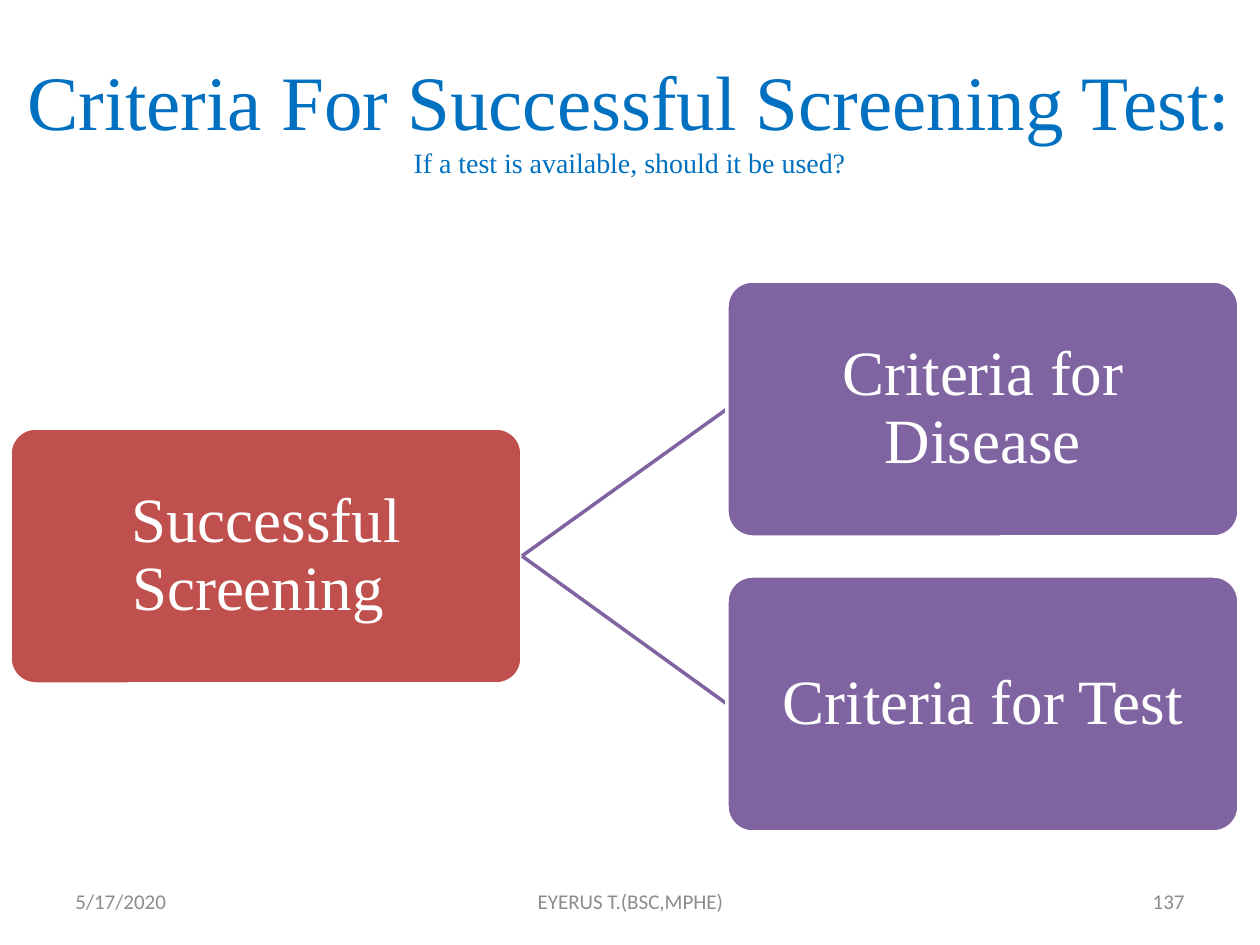
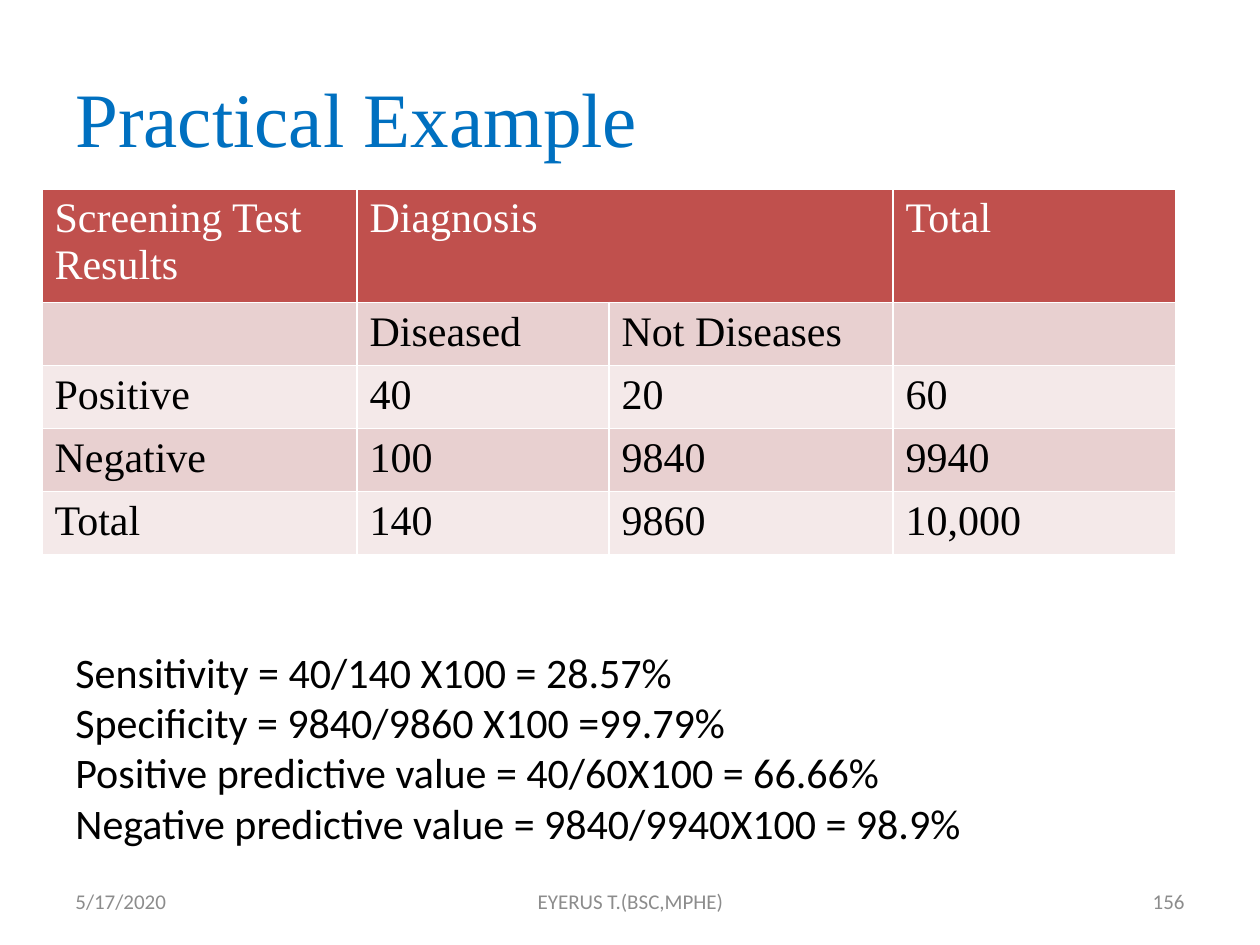
from lxml import etree
from pptx import Presentation
from pptx.dml.color import RGBColor
from pptx.enum.shapes import MSO_CONNECTOR, MSO_SHAPE
from pptx.enum.text import MSO_ANCHOR, PP_ALIGN
from pptx.oxml.ns import qn
from pptx.util import Emu, Pt

# Shared look
COLORS = {
    "title": "0070C0", "red": "C0504D", "purple": "8064A2", "white": "FFFFFF",
    "black": "000000", "footer": "8C8C8C", "band_dark": "E8D0D0", "band_light": "F4E9E9",
}
SERIF, SANS = "Times New Roman", "Calibri"
LEFT, CENTER, RIGHT = PP_ALIGN.LEFT, PP_ALIGN.CENTER, PP_ALIGN.RIGHT
PX = 914400 / 126


def px(*lengths):
    return [Emu(round(length * PX)) for length in lengths]


def write(paragraph, text, size, font, color, align=LEFT):
    paragraph.alignment = align
    run = paragraph.add_run()
    run.text = text
    run.font.size = Pt(size)
    run.font.name = font
    run.font.color.rgb = RGBColor.from_string(COLORS[color])


deck = Presentation()
deck.slide_width, deck.slide_height = px(1260, 945)
blank = deck.slide_layouts[6]

# Titles and footers of both slides
slides = []
for title, subtitle, left, width, align, number in [
    ("Criteria For Successful Screening Test:", "If a test is available, should it be used?",
     10, 1239, CENTER, "137"),
    ("Practical Example", None, 63, 1134, LEFT, "156"),
]:
    slide = deck.slides.add_slide(blank)
    slides.append(slide)
    heading = slide.shapes.add_textbox(*px(left, 38, width, 157)).text_frame
    heading.word_wrap = True
    heading.vertical_anchor = MSO_ANCHOR.MIDDLE
    write(heading.paragraphs[0], title, 44, SERIF, "title", align)
    if subtitle:
        heading.paragraphs[0].add_line_break()
        write(heading.paragraphs[0], subtitle, 16, SERIF, "title", align)

    for text, left, width, align in [
        ("5/17/2020", 63, 294, LEFT),
        ("EYERUS T.(BSC,MPHE)", 431, 399, CENTER),
        (number, 903, 294, RIGHT),
    ]:
        footer = slide.shapes.add_textbox(*px(left, 876, width, 50)).text_frame
        footer.word_wrap = True
        footer.vertical_anchor = MSO_ANCHOR.MIDDLE
        write(footer.paragraphs[0], text, 12, SANS, "footer", align)

criteria, example = slides

# Criteria tree: each branch line lies under the box it leads to
BOX_WIDTH, BOX_HEIGHT = 512, 256
root = None
for text, left, top, color in [
    ("Successful Screening ", 10, 428, "red"),
    ("Criteria for Disease", 727, 281, "purple"),
    ("Criteria for Test", 727, 576, "purple"),
]:
    branch = None
    if root:
        branch = criteria.shapes.add_connector(MSO_CONNECTOR.STRAIGHT, 0, 0, 0, 0)
        branch.line.color.rgb = RGBColor.from_string(COLORS["purple"])
        branch.line.width = Pt(2)
        etree.SubElement(branch._element.spPr, qn("a:effectLst"))

    box = criteria.shapes.add_shape(
        MSO_SHAPE.ROUNDED_RECTANGLE, *px(left, top, BOX_WIDTH, BOX_HEIGHT))
    box.adjustments[0] = 0.1
    box.shadow.inherit = False
    box.fill.solid()
    box.fill.fore_color.rgb = RGBColor.from_string(COLORS[color])
    box.line.color.rgb = RGBColor.from_string(COLORS["white"])
    box.line.width = Pt(2)
    label = box.text_frame
    label.word_wrap = True
    label.vertical_anchor = MSO_ANCHOR.MIDDLE
    label.margin_left, label.margin_top, label.margin_right, label.margin_bottom = px(4, 4, 4, 4)
    label.paragraphs[0].line_spacing = 0.9
    write(label.paragraphs[0], text, 36, SERIF, "white", CENTER)

    if branch:
        branch.begin_connect(root, 3)
        branch.end_connect(box, 1)
    else:
        root = box

# Screening results table
results = [
    ["Screening Test Results", "Diagnosis", "", "Total"],
    ["", "Diseased", "Not Diseases", ""],
    ["Positive", "40", "20", "60"],
    ["Negative", "100", "9840", "9940"],
    ["Total", "140", "9860", "10,000"],
]
column_widths = [315, 252, 284, 283]
row_heights = [104] + [59] * 4
table = example.shapes.add_table(
    len(results), len(column_widths),
    *px(42, 189, sum(column_widths), sum(row_heights))).table
table.first_row = table.horz_banding = False
for column, width in zip(table.columns, px(*column_widths)):
    column.width = width
for row, height in zip(table.rows, px(*row_heights)):
    row.height = height
table.cell(0, 1).merge(table.cell(0, 2))

for r, values in enumerate(results):
    fill = "red" if r == 0 else "band_dark" if r % 2 else "band_light"
    for c, value in enumerate(values):
        cell = table.cell(r, c)
        cell.fill.solid()
        cell.fill.fore_color.rgb = RGBColor.from_string(COLORS[fill])
        if value:
            write(cell.text_frame.paragraphs[0], value, 24, SERIF, "black" if r else "white")
        # White cell borders go before the fill
        properties = cell._tc.get_or_add_tcPr()
        for position, side in enumerate(["lnL", "lnR", "lnT", "lnB"]):
            border = etree.Element(qn(f"a:{side}"), w=str(Pt(1)))
            paint = etree.SubElement(border, qn("a:solidFill"))
            etree.SubElement(paint, qn("a:srgbClr"), val=COLORS["white"])
            properties.insert(position, border)

# Measures worked out from the table
measures = example.shapes.add_textbox(*px(63, 640, 1050, 217)).text_frame
measures.word_wrap = True
for i, measure in enumerate([
    "Sensitivity = 40/140 X100 = 28.57%",
    "Specificity = 9840/9860 X100 =99.79%",
    "Positive predictive value = 40/60X100 = 66.66%",
    "Negative predictive value = 9840/9940X100 = 98.9%",
]):
    paragraph = measures.add_paragraph() if i else measures.paragraphs[0]
    write(paragraph, measure, 24, SANS, "black")

deck.save("out.pptx")
